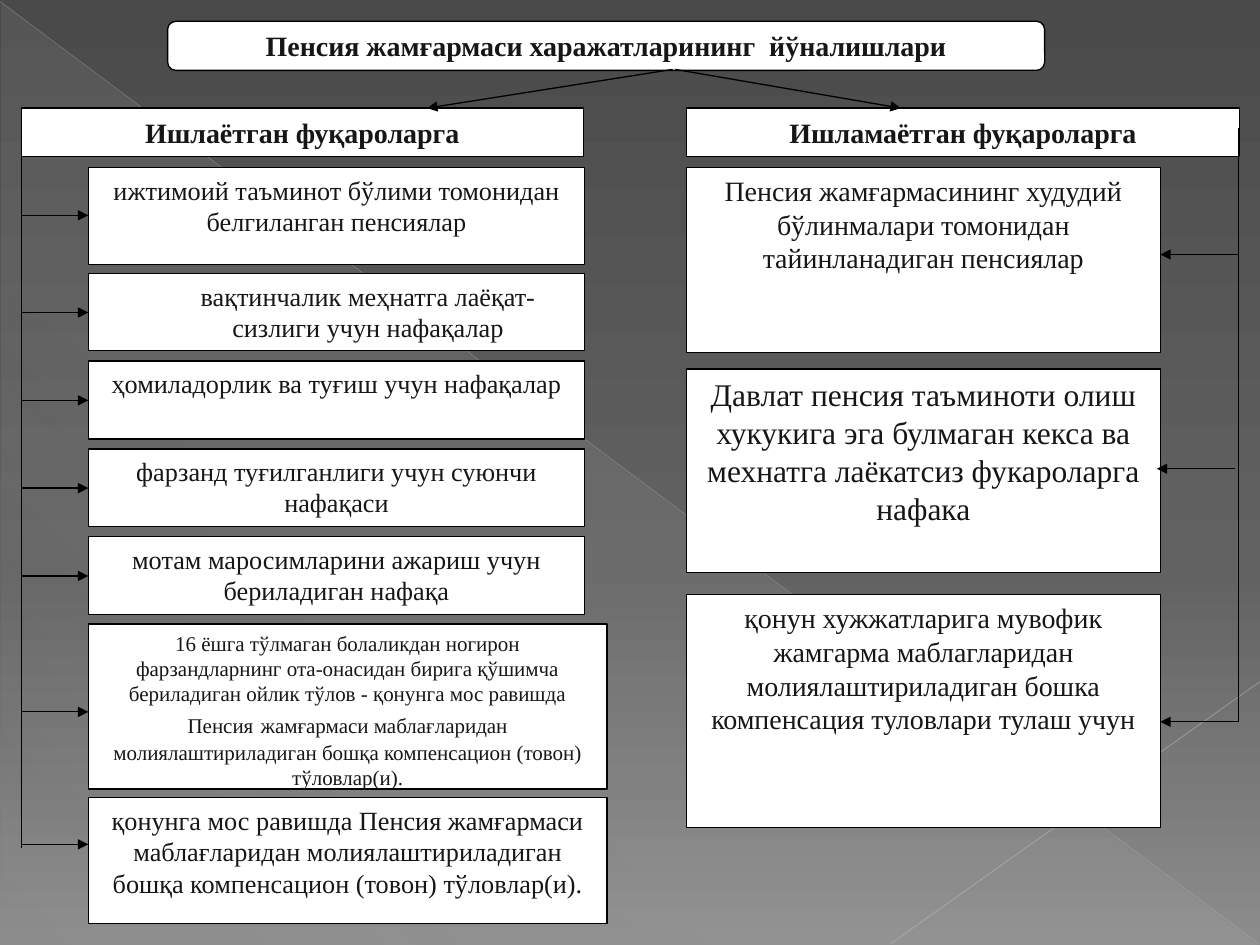
from dataclasses import dataclass

from lxml import etree
from pptx import Presentation
from pptx import util as u
from pptx.dml.color import RGBColor
from pptx.enum import shapes, text
from pptx.oxml.ns import qn


@dataclass(frozen=True)
class Theme:
    font: str = "Times New Roman"
    ink: str = "161616"
    line: str = "000000"
    box: str = "FFFFFF"
    backdrop: tuple = ((0, "4A4A4A", 100), (60, "626262", 100), (100, "8C8C8C", 100))
    sheen: tuple = ((0, "D2D2D2", 10), (70, "D2D2D2", 8), (100, "D2D2D2", 1))
    ray_down: str = "BFBFBF"
    ray_up: str = "C6C6C6"
    stroke: float = 0.75
    heading: int = 16
    large: int = 18
    medium: int = 16
    body: int = 15
    small: int = 12


THEME = Theme()
LEFT_RAIL, LEFT_X = 0.43, 1.78
RIGHT_RAIL, RIGHT_X, RIGHT_W = 24.97, 13.84, 9.55
HEADER_Y, HEADER_H = 2.18, 0.97
NARROW, WIDE = 10.01, 10.46

# top, height, width, arrow height, indent, runs of (text, size)
WORKING = [
    (3.38, 1.96, NARROW, 4.34, 0,
     [("ижтимоий таъминот бўлими томонидан белгиланган пенсиялар", THEME.body)]),
    (5.52, 1.55, NARROW, 6.3, 1.27,
     [("вақтинчалик меҳнатга лаёқат-сизлиги учун нафақалар", THEME.body)]),
    (7.28, 1.57, NARROW, 8.07, 0,
     [("ҳомиладорлик ва туғиш учун нафақалар", THEME.body)]),
    (9.05, 1.57, NARROW, 9.84, 0,
     [("фарзанд туғилганлиги учун суюнчи нафақаси", THEME.body)]),
    (10.82, 1.57, NARROW, 11.61, 0,
     [("мотам маросимларини ажариш учун бериладиган нафақа", THEME.body)]),
    (12.58, 3.33, WIDE, 14.35, 0,
     [("16 ёшга тўлмаган болаликдан ногирон фарзандларнинг ота-онасидан бирига "
       "қўшимча бериладиган ойлик тўлов - қонунга мос равишда Пенсия", THEME.small),
      (" ", THEME.medium),
      ("жамғармаси маблағларидан молиялаштириладиган бошқа компенсацион (товон) "
       "тўловлар(и).", THEME.small)]),
    (16.08, 2.54, WIDE, 17.02, 0,
     [("қонунга мос равишда Пенсия жамғармаси маблағларидан молиялаштириладиган "
       "бошқа компенсацион (товон) тўловлар(и).", THEME.body)]),
]

# top, height, arrow height, arrow shift, text, size
NOT_WORKING = [
    (3.38, 3.73, 5.13, 0,
     "Пенсия жамғармасининг худудий бўлинмалари томонидан тайинланадиган пенсиялар",
     THEME.medium),
    (7.44, 4.11, 9.45, -0.07,
     "Давлат пенсия таъминоти олиш хукукига эга булмаган кекса ва мехнатга "
     "лаёкатсиз фукароларга нафака", THEME.large),
    (11.99, 4.7, 14.55, 0,
     "қонун хужжатларига мувофик жамгарма маблагларидан молиялаштириладиган бошка "
     "компенсация туловлари тулаш учун", THEME.medium),
]


def set_opacity(color, percent):
    etree.SubElement(color, qn("a:alpha"), val=str(percent * 1000))


def paint_gradient(fill, root, stops, angle):
    """Fill with any number of (position, colour, opacity) stops, angle clockwise."""
    fill.gradient()
    fill.gradient_angle = 360 - angle
    stop_list = root.find(".//" + qn("a:gsLst"))
    for old in list(stop_list):
        stop_list.remove(old)
    for position, value, opacity in stops:
        stop = etree.SubElement(stop_list, qn("a:gs"), pos=str(position * 1000))
        color = etree.SubElement(stop, qn("a:srgbClr"), val=value)
        if opacity < 100:
            set_opacity(color, opacity)


def add_line(s, start, end, color=THEME.line, width=THEME.stroke, opacity=100, arrow=False):
    points = [u.Cm(value) for value in (*start, *end)]
    line = s.shapes.add_connector(shapes.MSO_CONNECTOR.STRAIGHT, *points)
    line.line.width = u.Pt(width)
    line.line.color.rgb = RGBColor.from_string(color)
    properties = line.element.spPr
    if opacity < 100:
        set_opacity(properties.find(".//" + qn("a:srgbClr")), opacity)
    if arrow:
        etree.SubElement(properties.find(qn("a:ln")), qn("a:tailEnd"), type="triangle")
    etree.SubElement(properties, qn("a:effectLst"))


def add_box(s, x, y, w, h, runs, bold=False, indent=0,
            kind=shapes.MSO_SHAPE.RECTANGLE, anchor=text.MSO_ANCHOR.TOP):
    sp = s.shapes.add_shape(kind, u.Cm(x), u.Cm(y), u.Cm(w), u.Cm(h))
    sp.shadow.inherit = False
    sp.fill.solid()
    sp.fill.fore_color.rgb = RGBColor.from_string(THEME.box)
    sp.line.color.rgb = RGBColor.from_string(THEME.line)
    sp.line.width = u.Pt(THEME.stroke)
    tf = sp.text_frame
    tf.word_wrap = True
    tf.vertical_anchor = anchor
    p = tf.paragraphs[0]
    p.alignment = text.PP_ALIGN.CENTER
    if indent:
        p.level = 1
        p._p.get_or_add_pPr().set("marL", str(u.Cm(indent)))
    for content, size in runs:
        r = p.add_run()
        r.text = content
        r.font.name = THEME.font
        r.font.size = u.Pt(size)
        r.font.bold = bold
        r.font.color.rgb = RGBColor.from_string(THEME.ink)


def add_heading(s, x, y, w, h, content, kind=shapes.MSO_SHAPE.RECTANGLE):
    add_box(s, x, y, w, h, [(content, THEME.heading)], bold=True, kind=kind,
            anchor=text.MSO_ANCHOR.MIDDLE)


def add_backdrop(s):
    paint_gradient(s.background.fill, s.element, THEME.backdrop, 90)
    sp = s.shapes.add_shape(shapes.MSO_SHAPE.RIGHT_TRIANGLE,
                            u.Cm(0.03), u.Cm(0.05), u.Cm(25.35), u.Cm(19))
    sp.shadow.inherit = False
    sp.line.fill.background()
    paint_gradient(sp.fill, sp.element, THEME.sheen, 133)
    add_line(s, (0, 0.03), (25.37, 19.02), THEME.ray_down, 0.39, 35)
    add_line(s, (25.4, 13.74), (17.96, 19.02), THEME.ray_up, 0.47, 45)


def add_headings(s):
    add_heading(s, 3.38, 0.43, 17.68, 0.99, "Пенсия жамғармаси харажатларининг  йўналишлари",
                shapes.MSO_SHAPE.ROUNDED_RECTANGLE)
    add_heading(s, LEFT_RAIL, HEADER_Y, 11.33, HEADER_H, "Ишлаётган фуқароларга")
    add_heading(s, RIGHT_X, HEADER_Y, 11.15, HEADER_H, "Ишламаётган фуқароларга")
    add_line(s, (13.56, 1.4), (8.61, HEADER_Y), arrow=True)
    add_line(s, (13.61, 1.4), (18.16, HEADER_Y), arrow=True)


def add_branches(s):
    add_line(s, (LEFT_RAIL, 2.59), (LEFT_RAIL, 17.09))
    add_line(s, (RIGHT_RAIL, 2.59), (RIGHT_RAIL, 14.55))
    for top, height, width, arrow_y, indent, runs in WORKING:
        add_box(s, LEFT_X, top, width, height, runs, indent=indent)
        add_line(s, (LEFT_RAIL, arrow_y), (LEFT_X, arrow_y), arrow=True)
    for top, height, arrow_y, shift, content, size in NOT_WORKING:
        add_box(s, RIGHT_X, top, RIGHT_W, height, [(content, size)])
        add_line(s, (RIGHT_RAIL + shift, arrow_y),
                 (RIGHT_X + RIGHT_W + shift, arrow_y), arrow=True)


def main():
    prs = Presentation()
    prs.slide_width, prs.slide_height = u.Cm(25.4), u.Cm(19.05)
    s = prs.slides.add_slide(prs.slide_layouts[6])
    add_backdrop(s)
    add_headings(s)
    add_branches(s)
    prs.save("out.pptx")


if __name__ == "__main__":
    main()
